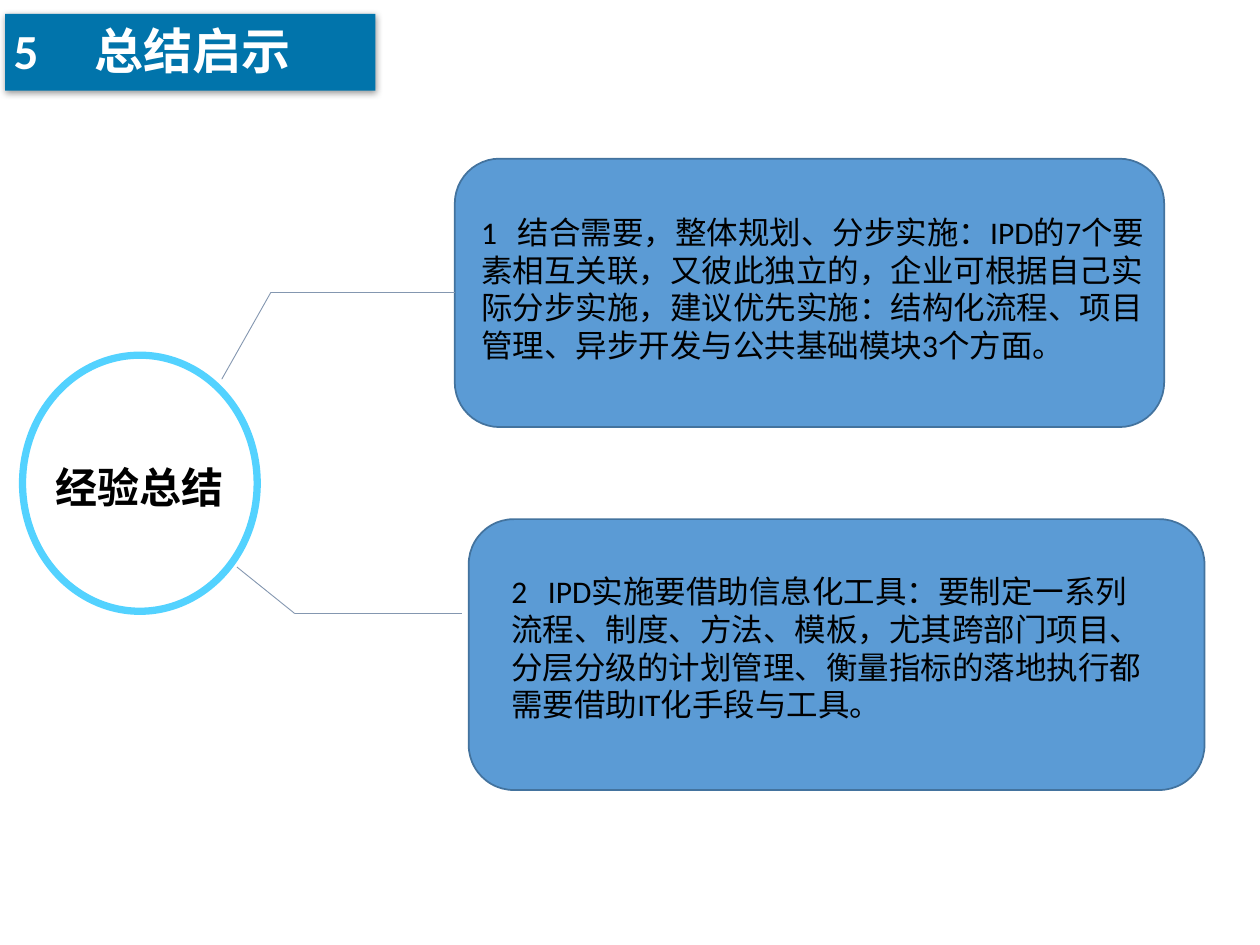
from itertools import pairwise

from lxml.etree import SubElement
from pptx import Presentation
from pptx.dml.color import RGBColor
from pptx.enum.shapes import MSO_CONNECTOR, MSO_SHAPE
from pptx.enum.text import MSO_AUTO_SIZE, PP_ALIGN
from pptx.oxml.ns import qn
from pptx.util import Inches, Pt

COLORS = {
    "banner": "0174AB",
    "card": "5B9BD5",
    "card_edge": "43739E",
    "ring": "53D2FF",
    "branch": "8497B0",
    "dark": "000000",
    "light": "FFFFFF",
}
LATIN, HAN = "Calibri", "Noto Sans CJK SC"

LESSONS = [
    {
        "card": (3.61, 1.26, 5.63, 2.13),
        "body": (3.72, 1.64, 5.52, 1.77),
        "branch": [(1.76, 3.01), (2.15, 2.32), (3.61, 2.32)],
        "text": "1\t结合需要，整体规划、分步实施：IPD的7个要素相互关联，又彼此独立的，"
                "企业可根据自己实际分步实施，建议优先实施：结构化流程、项目管理、"
                "异步开发与公共基础模块3个方面。",
    },
    {
        "card": (3.72, 4.12, 5.84, 2.15),
        "body": (3.96, 4.49, 5.28, 1.31),
        "branch": [(1.88, 4.5), (2.34, 4.87), (3.67, 4.87)],
        "text": "2\tIPD实施要借助信息化工具：要制定一系列流程、制度、方法、模板，"
                "尤其跨部门项目、分层分级的计划管理、衡量指标的落地执行都"
                "需要借助IT化手段与工具。",
    },
]


def rgb(name):
    return RGBColor.from_string(COLORS[name])


def add_text(slide, box, text, *, size, color="dark", bold=False, font=LATIN,
             align=None, wrap=True, tab=None):
    """Place one paragraph; tab is the stop in inches after a leading number."""
    frame = slide.shapes.add_textbox(*map(Inches, box)).text_frame
    frame.word_wrap = wrap
    frame.auto_size = MSO_AUTO_SIZE.SHAPE_TO_FIT_TEXT
    paragraph = frame.paragraphs[0]
    if align is not None:
        paragraph.alignment = align
    if tab:
        stops = SubElement(paragraph._p.get_or_add_pPr(), qn("a:tabLst"))
        SubElement(stops, qn("a:tab"), pos=str(Inches(tab)), algn="l")
    run = paragraph.add_run()
    run.text = text
    run.font.name = font
    run.font.size = Pt(size)
    run.font.bold = bold
    run.font.color.rgb = rgb(color)
    SubElement(run._r.get_or_add_rPr(), qn("a:ea"), typeface=HAN)


def add_filled(slide, preset, box, fill, edge=None):
    shape = slide.shapes.add_shape(preset, *map(Inches, box))
    shape.shadow.inherit = False
    shape.fill.solid()
    shape.fill.fore_color.rgb = rgb(fill)
    if edge:
        shape.line.color.rgb = rgb(edge)
        shape.line.width = Pt(1)
    else:
        shape.line.fill.background()
    return shape


def add_drop_shadow(shape):
    effects = shape._element.spPr.find(qn("a:effectLst"))
    shadow = SubElement(effects, qn("a:outerShdw"), blurRad=str(Pt(4)),
                        dist=str(Pt(1)), dir="5400000", rotWithShape="0")
    tint = SubElement(shadow, qn("a:srgbClr"), val=COLORS["dark"])
    SubElement(tint, qn("a:alpha"), val="40000")


def add_branch(slide, points):
    """Join the hub to a lesson with straight segments through the points."""
    for start, end in pairwise(points):
        segment = slide.shapes.add_connector(
            MSO_CONNECTOR.STRAIGHT, *map(Inches, start + end))
        segment.line.color.rgb = rgb("branch")
        segment.line.width = Pt(0.5)
        SubElement(segment._element.spPr, qn("a:effectLst"))


def add_lesson(slide, card, body, branch, text):
    add_filled(slide, MSO_SHAPE.ROUNDED_RECTANGLE, card, "card", "card_edge")
    add_text(slide, body, text, size=18, tab=0.29)
    add_branch(slide, branch)


def add_hub(slide, box):
    left, top, width, _ = box
    ring = add_filled(slide, MSO_SHAPE.DONUT, box, "ring")
    ring.adjustments[0] = 0.03
    label_width = 1.55
    label_left = left + (width - label_width) / 2
    add_text(slide, (label_left, top + 0.82, label_width, 0.5), "经验总结",
             size=24, bold=True, font=HAN, align=PP_ALIGN.CENTER, wrap=False)


def add_banner(slide, box):
    left, top, _, _ = box
    add_drop_shadow(add_filled(slide, MSO_SHAPE.RECTANGLE, box, "banner"))
    add_text(slide, (left - 0.03, top, 2.56, 0.57), "5\t总结启示",
             size=28, color="light", bold=True, tab=0.64)


def main():
    deck = Presentation()
    deck.slide_width, deck.slide_height = Inches(10), Inches(7.5)
    slide = deck.slides.add_slide(deck.slide_layouts[6])
    for lesson in LESSONS:
        add_lesson(slide, **lesson)
    add_hub(slide, (0.15, 2.79, 1.92, 2.09))
    add_banner(slide, (0.04, 0.11, 2.94, 0.61))
    deck.save("out.pptx")


if __name__ == "__main__":
    main()
